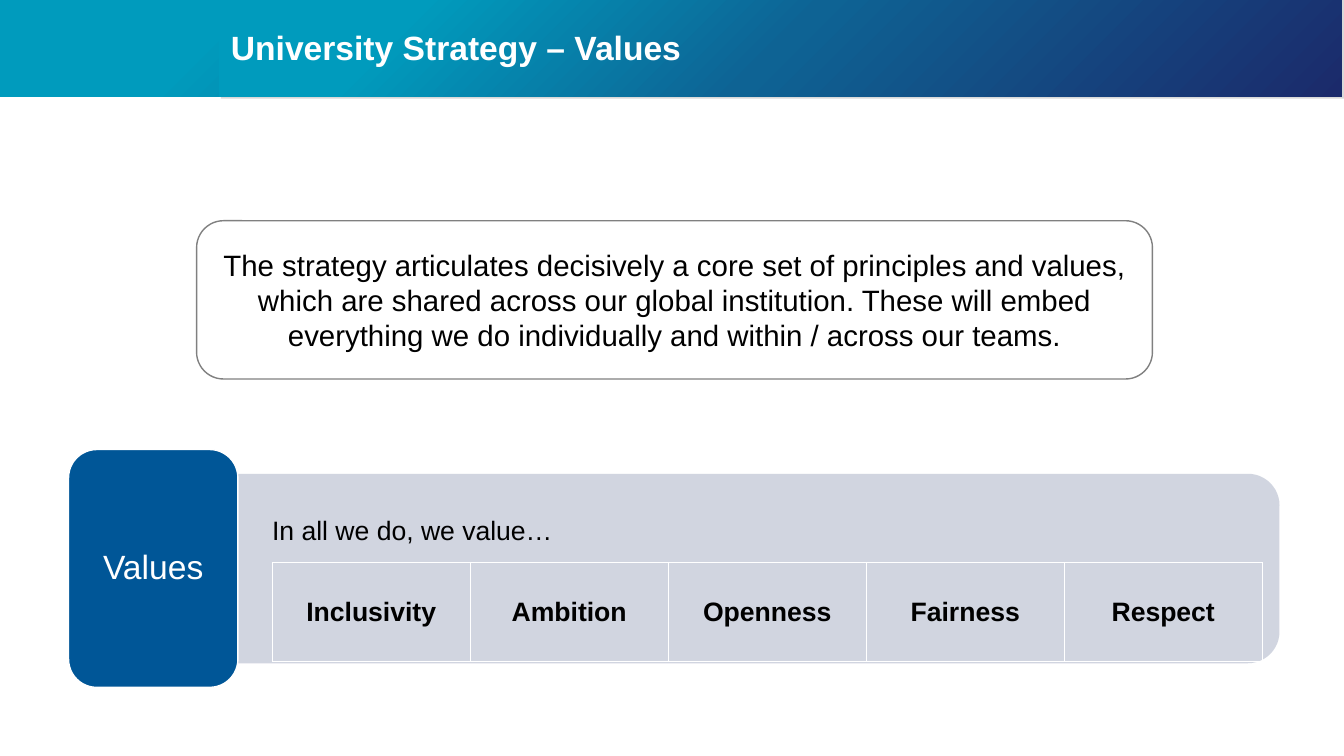
from copy import deepcopy

from pptx import Presentation
from pptx.dml.color import RGBColor
from pptx.enum.shapes import MSO_SHAPE as Shape
from pptx.enum.text import MSO_ANCHOR as Anchor, PP_ALIGN as Align
from pptx.oxml.ns import qn
from pptx.util import Inches, Pt

TITLE = "University Strategy – Values"
STATEMENT = (
    "The strategy articulates decisively a core set of principles and values, "
    "which are shared across our global institution. These will embed "
    "everything we do individually and within / across our teams."
)
LABEL = "Values"
LEAD_IN = "In all we do, we value…"
VALUES = ["Inclusivity", "Ambition", "Openness", "Fairness", "Respect"]

COLORS = {
    "teal": "009BBD", "blue": "0E6394", "navy": "1B2A6B", "edge": "D9D9D9",
    "panel": "CCD1DD", "label": "005697", "outline": "808080",
    "white": "FFFFFF", "black": "000000",
}
HEADER_STOPS = [(17, "teal"), (50, "blue"), (100, "navy")]
FONT = "Arial"


def color(name):
    return RGBColor.from_string(COLORS[name])


def add_shape(page, kind, frame, fill=None, line=None):
    shape = page.shapes.add_shape(kind, *map(Inches, frame))
    shape.shadow.inherit = False
    if fill:
        shape.fill.solid()
        shape.fill.fore_color.rgb = color(fill)
    else:
        shape.fill.background()
    if line:
        shape.line.color.rgb = color(line)
        shape.line.width = Pt(1)
    else:
        shape.line.fill.background()
    return shape


def add_header_band(page, frame):
    band = add_shape(page, Shape.RECTANGLE, frame)
    band.fill.gradient()
    band.fill.gradient_angle = 315
    stop_list = band.element.spPr.find(".//" + qn("a:gsLst"))
    stop_list.append(deepcopy(stop_list[0]))
    for stop, (position, name) in zip(band.fill.gradient_stops, HEADER_STOPS):
        stop.position = position / 100
        stop.color.rgb = color(name)


def write(frame, text, size, ink="black", bold=False, align=Align.CENTER, spacing=None):
    frame.word_wrap = True
    frame.vertical_anchor = Anchor.MIDDLE
    para = frame.paragraphs[0]
    para.text = text
    para.alignment = align
    para.line_spacing = spacing
    para.font.name = FONT
    para.font.size = Pt(size)
    para.font.bold = bold
    para.font.color.rgb = color(ink)


def add_header(page):
    add_header_band(page, (0, -0.02, 13.33, 0.98))
    add_shape(page, Shape.RECTANGLE, (2.19, 0, 11.15, 0.98), "edge")
    add_header_band(page, (2.17, -0.02, 11.14, 0.98))
    title = page.shapes.title
    title.left, title.top, title.width, title.height = map(Inches, (2.19, 0.11, 11.14, 0.76))
    write(title.text_frame, TITLE, 24, "white", True, Align.LEFT, 0.9)
    page.shapes.element.append(title.element)


def add_panel(page):
    panel = add_shape(page, Shape.ROUND_2_SAME_RECTANGLE, (6.58, 0.47, 1.88, 10.34), "panel")
    panel.rotation = 90
    tint = panel.element.spPr.find(".//" + qn("a:srgbClr"))
    tint.append(tint.makeelement(qn("a:alpha"), {"val": "90000"}))
    label = add_shape(page, Shape.ROUNDED_RECTANGLE, (0.68, 4.46, 1.68, 2.36), "label", "white")
    write(label.text_frame, LABEL, 24, "white", spacing=0.9)
    lead_in = page.shapes.add_textbox(*map(Inches, (2.6, 5.05, 5.01, 0.42)))
    write(lead_in.text_frame, LEAD_IN, 19, align=Align.LEFT)


def add_values(page):
    frame = map(Inches, (2.7, 5.58, 9.82, 0.98))
    table = page.shapes.add_table(1, len(VALUES), *frame).table
    table.first_row = table.horz_banding = False
    for cell, value in zip(table.rows[0].cells, VALUES):
        cell.fill.background()
        write(cell.text_frame, value, 19, bold=True)
        cell.vertical_anchor = Anchor.MIDDLE


def add_statement(page):
    callout = add_shape(
        page, Shape.ROUNDED_RECTANGULAR_CALLOUT, (1.95, 2.19, 9.48, 1.57), line="outline"
    )
    for index, value in enumerate((-0.5, 0.17, 0.17)):
        callout.adjustments[index] = value
    write(callout.text_frame, STATEMENT, 21)


def main():
    deck = Presentation()
    deck.slide_width, deck.slide_height = Inches(13.33), Inches(7.5)
    page = deck.slides.add_slide(deck.slide_layouts[5])
    add_header(page)
    add_panel(page)
    add_values(page)
    add_statement(page)
    deck.save("out.pptx")


if __name__ == "__main__":
    main()
